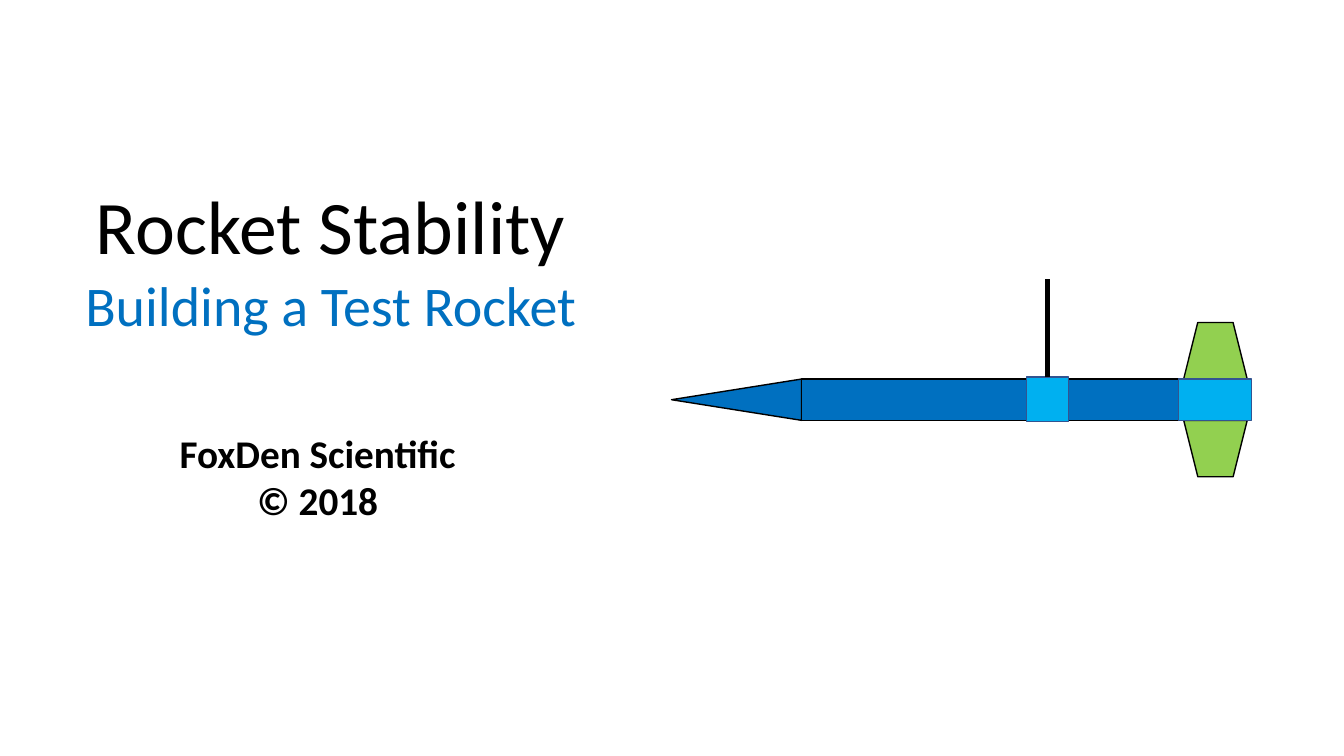
"""Builds the title slide of a lesson on rocket stability."""
from pptx import Presentation
from pptx.dml.color import RGBColor
from pptx.enum.shapes import MSO_CONNECTOR, MSO_SHAPE
from pptx.enum.text import PP_ALIGN
from pptx.oxml.ns import qn
from pptx.util import Inches, Pt
from lxml.etree import SubElement

BLACK, BLUE, SKY, GREEN, EDGE = "000000", "0070C0", "00B0F0", "92D050", "325491"
TEXTS = [
    ((0.61, 1.73, 5.34, 1.68), [("Rocket Stability", 54, BLACK, False),
                                ("Building a Test Rocket", 40, BLUE, False)]),
    ((1.34, 4.21, 3.62, 1.04), [("FoxDen Scientific", 28, BLACK, True),
                                ("© 2018", 28, BLACK, True)]),
]
BODY_X, BODY_Y, BODY_W, BODY_H = 7.95, 3.76, 4.45, 0.41
NOSE_LENGTH = 1.29
FIN_X, FIN_W, FIN_H = 11.74, 0.63, 0.56
BAND_X, BAND_Y, BAND_W, BAND_H = 10.18, 3.74, 0.42, 0.44
STRING_TOP = 2.77

nose_x = BODY_X - (NOSE_LENGTH + BODY_H) / 2
nose_y = BODY_Y + (BODY_H - NOSE_LENGTH) / 2
ROCKET = [
    (MSO_SHAPE.ISOSCELES_TRIANGLE, (nose_x, nose_y, BODY_H, NOSE_LENGTH), 270, BLUE, BLACK),
    (MSO_SHAPE.RECTANGLE, (BODY_X, BODY_Y, BODY_W, BODY_H), 0, BLUE, BLACK),
    (MSO_SHAPE.TRAPEZOID, (FIN_X, BODY_Y - FIN_H, FIN_W, FIN_H), 0, GREEN, BLACK),
    (MSO_SHAPE.TRAPEZOID, (FIN_X, BODY_Y + BODY_H, FIN_W, FIN_H), 180, GREEN, BLACK),
    (MSO_SHAPE.RECTANGLE, (11.69, BODY_Y, 0.72, BODY_H), 0, SKY, EDGE),
    (MSO_SHAPE.RECTANGLE, (BAND_X, BAND_Y, BAND_W, BAND_H), 0, SKY, EDGE),
]


def rgb(value):
    return RGBColor.from_string(value)


def add_text(s, box, lines):
    tf = s.shapes.add_textbox(*map(Inches, box)).text_frame
    tf.word_wrap = True
    for i, (text, size, color, bold) in enumerate(lines):
        p = tf.add_paragraph() if i else tf.paragraphs[0]
        p.alignment = PP_ALIGN.CENTER
        r = p.add_run()
        r.text = text
        r.font.name = "Calibri"
        r.font.size = Pt(size)
        r.font.bold = bold
        r.font.color.rgb = rgb(color)


def add_part(group, kind, box, rotation, fill, line):
    sp = group.shapes.add_shape(kind, *map(Inches, box))
    sp.rotation = rotation
    sp.shadow.inherit = False
    sp.fill.solid()
    sp.fill.fore_color.rgb = rgb(fill)
    sp.line.color.rgb = rgb(line)
    sp.line.width = Pt(1)


def add_string(group):
    x = Inches(BAND_X + BAND_W / 2)
    string = group.shapes.add_connector(
        MSO_CONNECTOR.STRAIGHT, x, Inches(STRING_TOP), x, Inches(BAND_Y))
    string.line.color.rgb = rgb(BLACK)
    string.line.width = Pt(3)
    SubElement(string._element.spPr, qn("a:effectLst"))


def main():
    prs = Presentation()
    prs.slide_width, prs.slide_height = Inches(13.33), Inches(7.5)
    s = prs.slides.add_slide(prs.slide_layouts[6])
    title, credit = TEXTS
    add_text(s, *title)
    rocket = s.shapes.add_group_shape()
    for part in ROCKET:
        add_part(rocket, *part)
    add_string(rocket)
    add_text(s, *credit)
    prs.save("out.pptx")


if __name__ == "__main__":
    main()
